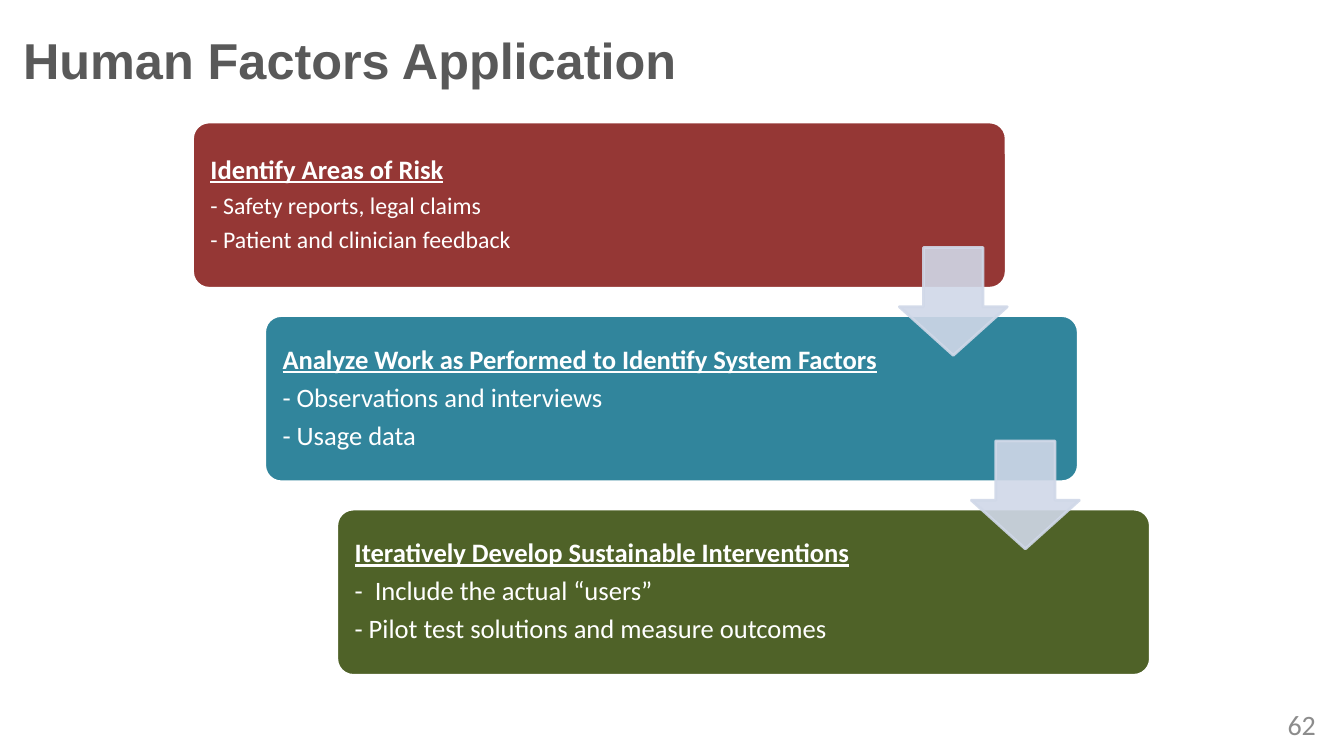
from pptx import Presentation
from pptx.dml.color import RGBColor
from pptx.enum.shapes import MSO_SHAPE
from pptx.enum.text import MSO_ANCHOR, PP_ALIGN
from pptx.oxml import parse_xml
from pptx.oxml.ns import nsdecls
from pptx.util import Inches, Pt

ROUND, ARROW = MSO_SHAPE.ROUNDED_RECTANGLE, MSO_SHAPE.DOWN_ARROW
TOP, MIDDLE = MSO_ANCHOR.TOP, MSO_ANCHOR.MIDDLE
LEFT, RIGHT = PP_ALIGN.LEFT, PP_ALIGN.RIGHT

# Content: fill, size of the detail lines, heading, details
TITLE = "Human Factors Application"
PAGE = "62"
STEPS = [
    ("953735", 17, "Identify Areas of Risk",
     ["- Safety reports, legal claims", "- Patient and clinician feedback"]),
    ("31859C", 19, "Analyze Work as Performed to Identify System Factors",
     ["- Observations and interviews", "- Usage data"]),
    ("4F6228", 19, "Iteratively Develop Sustainable Interventions",
     ["-  Include the actual “users”",
      "- Pilot test solutions and measure outcomes"]),
]

# Layout: each step moves right and down by the same amount
STEP_X, STEP_Y, STEP_W, STEP_H = 1.91, 1.21, 8.07, 1.65
ARROW_X, ARROW_Y, ARROW_SIZE = 8.92, 2.455, 1.07
SHIFT_X, SHIFT_Y = 0.715, 1.92
HEADING_SIZE = 19
ARROW_COLOR, ARROW_ALPHA = "D0D8E8", 90

prs = Presentation()
prs.slide_width, prs.slide_height = Inches(13.33), Inches(7.5)
s = prs.slides.add_slide(prs.slide_layouts[6])


def rgb(value):
    return RGBColor.from_string(value)


def add_line(p, text, color, **fmt):
    r = p.add_run()
    r.text = text
    for name, value in fmt.items():
        setattr(r.font, name, value)
    r.font.color.rgb = rgb(color)


def add_text(box, text, color, anchor, align, **fmt):
    sp = s.shapes.add_textbox(*map(Inches, box))
    tf = sp.text_frame
    tf.word_wrap = True
    tf.vertical_anchor = anchor
    tf.paragraphs[0].alignment = align
    add_line(tf.paragraphs[0], text, color, **fmt)


def add_block(kind, box, adjustments, fill, line):
    sp = s.shapes.add_shape(kind, *map(Inches, box))
    sp.shadow.inherit = False
    for i, value in enumerate(adjustments):
        sp.adjustments[i] = value
    sp.fill.solid()
    sp.fill.fore_color.rgb = rgb(fill)
    sp.line.color.rgb = rgb(line)
    sp.line.width = Pt(2)
    return sp


# Title and page number
add_text((0.13, 0.24, 9.75, 1.25), TITLE, "595959", TOP, LEFT,
         name="Arial", size=Pt(36), bold=True)
add_text((10.04, 6.99, 3.11, 0.4), PAGE, "8C8C8C", MIDDLE, RIGHT,
         name="Calibri", size=Pt(20))

# Step boxes
for i, (fill, detail_size, heading, details) in enumerate(STEPS):
    box = (STEP_X + i * SHIFT_X, STEP_Y + i * SHIFT_Y, STEP_W, STEP_H)
    sp = add_block(ROUND, box, [0.1], fill, "FFFFFF")
    tf = sp.text_frame
    tf.word_wrap = True
    tf.vertical_anchor = MIDDLE
    tf.margin_left, tf.margin_right = Inches(0.13), Inches(1.7)
    for j, text in enumerate([heading] + details):
        p = tf.add_paragraph() if j else tf.paragraphs[0]
        size = detail_size if j else HEADING_SIZE
        p.alignment = LEFT
        p.line_spacing = 0.9
        p.space_after = Pt(round(size * 0.35, 1))
        add_line(p, text, "FFFFFF", name="Calibri", size=Pt(size),
                 bold=j == 0, underline=j == 0)

# Translucent arrows between consecutive steps
for i in range(len(STEPS) - 1):
    box = (ARROW_X + i * SHIFT_X, ARROW_Y + i * SHIFT_Y,
           ARROW_SIZE, ARROW_SIZE)
    # Down arrow adjustments: shaft width, head length
    sp = add_block(ARROW, box, [0.55, 0.45], ARROW_COLOR, ARROW_COLOR)
    for color in sp._element.spPr.xpath(".//a:srgbClr"):
        color.append(parse_xml(
            f'<a:alpha {nsdecls("a")} val="{ARROW_ALPHA * 1000}"/>'))

prs.save("out.pptx")
